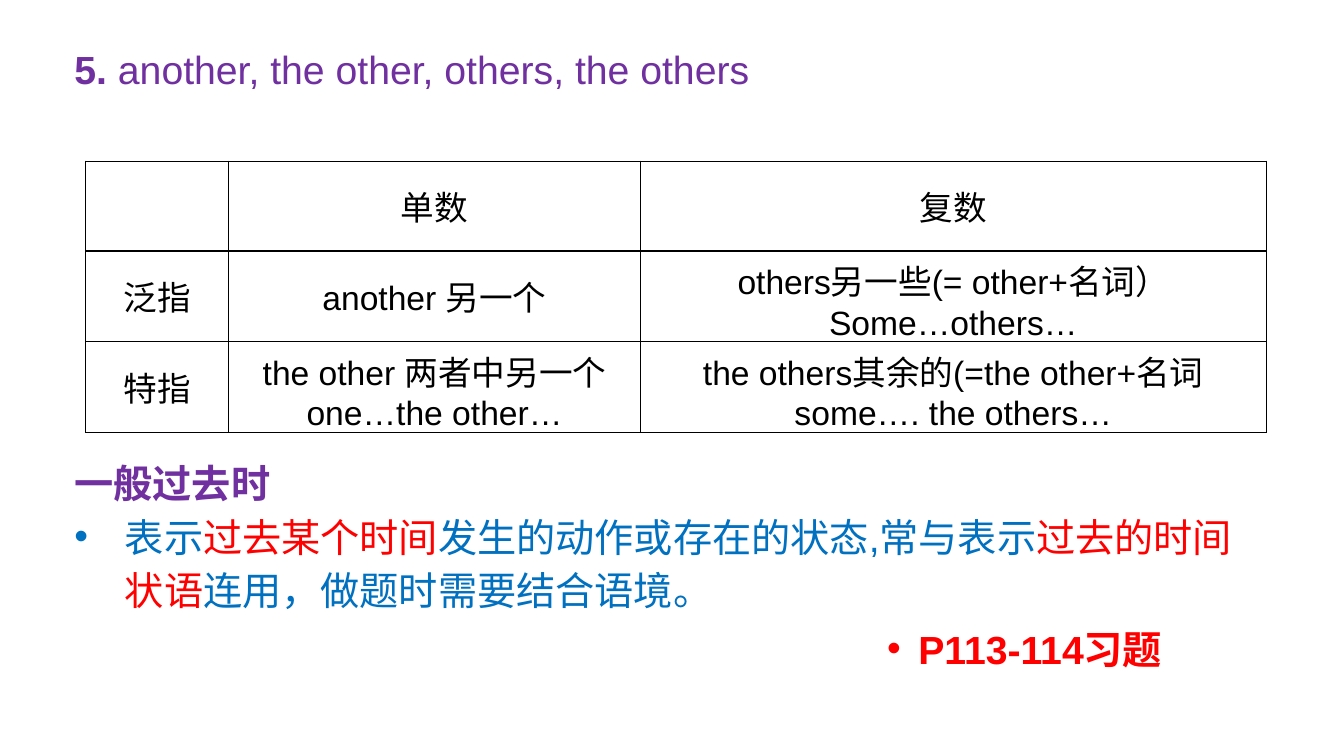
from lxml import etree
from pptx import Presentation
from pptx.dml.color import RGBColor
from pptx.enum.text import MSO_ANCHOR, MSO_AUTO_SIZE, PP_ALIGN
from pptx.oxml.ns import qn
from pptx.util import Inches, Pt

FONT = "Arial"
COLORS = {
    "purple": "7030A0",
    "blue": "0070C0",
    "red": "FF0000",
    "black": "000000",
}
COL_WIDTHS = [1.42, 4.08, 6.21]
ROW_HEIGHT = 0.89
ROWS = [
    ["", "单数", "复数"],
    ["泛指", "another 另一个", "others另一些(= other+名词）\nSome…others…"],
    ["特指", "the other 两者中另一个\none…the other…",
     "the others其余的(=the other+名词\vsome…. the others…"],
]
RULE = [
    ("表示", "blue"),
    ("过去某个时间", "red"),
    ("发生的动作或存在的状态,常与表示", "blue"),
    ("过去的时间状语", "red"),
    ("连用，做题时需要结合语境。", "blue"),
]


def style_run(r, size, color, bold=False):
    r.font.name = FONT
    r.font.size = Pt(size)
    r.font.bold = bold
    r.font.color.rgb = RGBColor.from_string(COLORS[color])


def add_run(p, text, color, bold=False):
    r = p.add_run()
    r.text = text
    style_run(r, 28, color, bold)


def add_bullet(p, indent):
    pPr = p._p.get_or_add_pPr()
    pPr.set("marL", str(Inches(indent)))
    pPr.set("indent", str(-Inches(indent)))
    etree.SubElement(pPr, qn("a:buFont"), typeface=FONT)
    etree.SubElement(pPr, qn("a:buChar"), char="•")


def add_text_box(slide, box):
    tf = slide.shapes.add_textbox(*map(Inches, box)).text_frame
    tf.word_wrap = True
    tf.auto_size = MSO_AUTO_SIZE.SHAPE_TO_FIT_TEXT
    return tf


def add_heading(slide, box):
    p = add_text_box(slide, box).paragraphs[0]
    add_run(p, "5. ", "purple", True)
    add_run(p, "another, the other, others, the others", "purple")


def add_borders(cell):
    tcPr = cell._tc.get_or_add_tcPr()
    for index, side in enumerate(("lnL", "lnR", "lnT", "lnB")):
        ln = etree.Element(qn(f"a:{side}"), w=str(Pt(1)))
        fill = etree.SubElement(ln, qn("a:solidFill"))
        etree.SubElement(fill, qn("a:srgbClr"), val=COLORS["black"])
        tcPr.insert(index, ln)


def add_pronoun_table(slide, left, top):
    width, height = sum(COL_WIDTHS), ROW_HEIGHT * len(ROWS)
    table = slide.shapes.add_table(
        len(ROWS), len(COL_WIDTHS), *map(Inches, (left, top, width, height))).table
    for col, col_width in zip(table.columns, COL_WIDTHS):
        col.width = Inches(col_width)
    for row, texts in zip(table.rows, ROWS):
        row.height = Inches(ROW_HEIGHT)
        for cell, text in zip(row.cells, texts):
            cell.fill.background()
            add_borders(cell)
            cell.vertical_anchor = MSO_ANCHOR.MIDDLE
            cell.text_frame.text = text
            for p in cell.text_frame.paragraphs:
                p.alignment = PP_ALIGN.CENTER
                for r in p.runs:
                    style_run(r, 24, "black")


def add_past_tense(slide, box):
    tf = add_text_box(slide, box)
    title, rule = tf.paragraphs[0], tf.add_paragraph()
    for p in (title, rule):
        p.line_spacing = Pt(38)
    add_run(title, "一般过去时", "purple", True)
    add_bullet(rule, 0.5)
    for text, color in RULE:
        add_run(rule, text, color)


def add_exercise_note(slide, box):
    p = add_text_box(slide, box).paragraphs[0]
    add_bullet(p, 0.31)
    add_run(p, "P113-114习题", "red", True)


def main():
    prs = Presentation()
    prs.slide_width, prs.slide_height = Inches(13.33), Inches(7.5)
    slide = prs.slides.add_slide(prs.slide_layouts[6])
    add_heading(slide, (0.64, 0.4, 9.96, 0.57))
    add_pronoun_table(slide, 0.85, 1.6)
    add_past_tense(slide, (0.64, 4.45, 11.82, 1.7))
    add_exercise_note(slide, (8.7, 6.15, 3.86, 0.57))
    prs.save("out.pptx")


if __name__ == "__main__":
    main()
